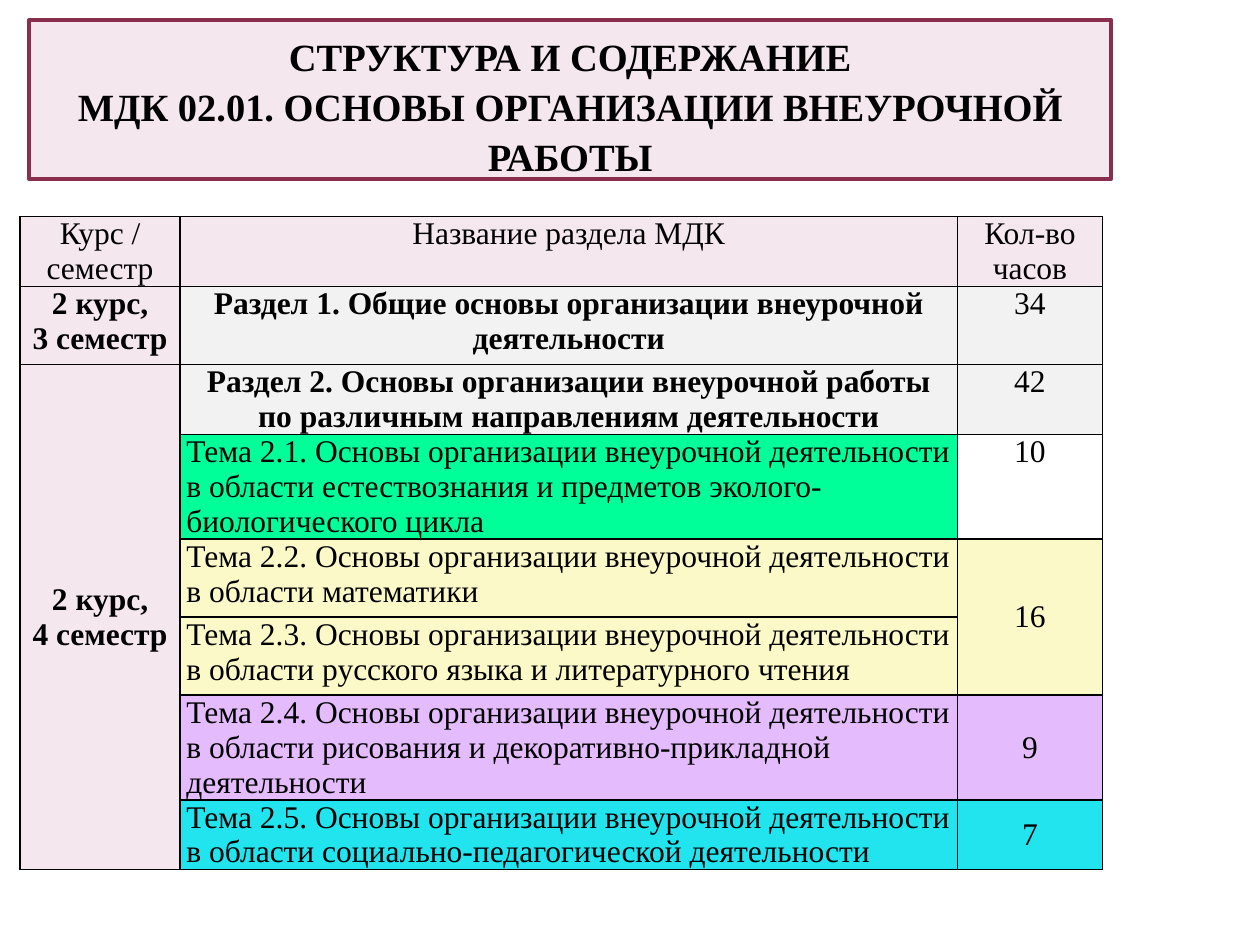
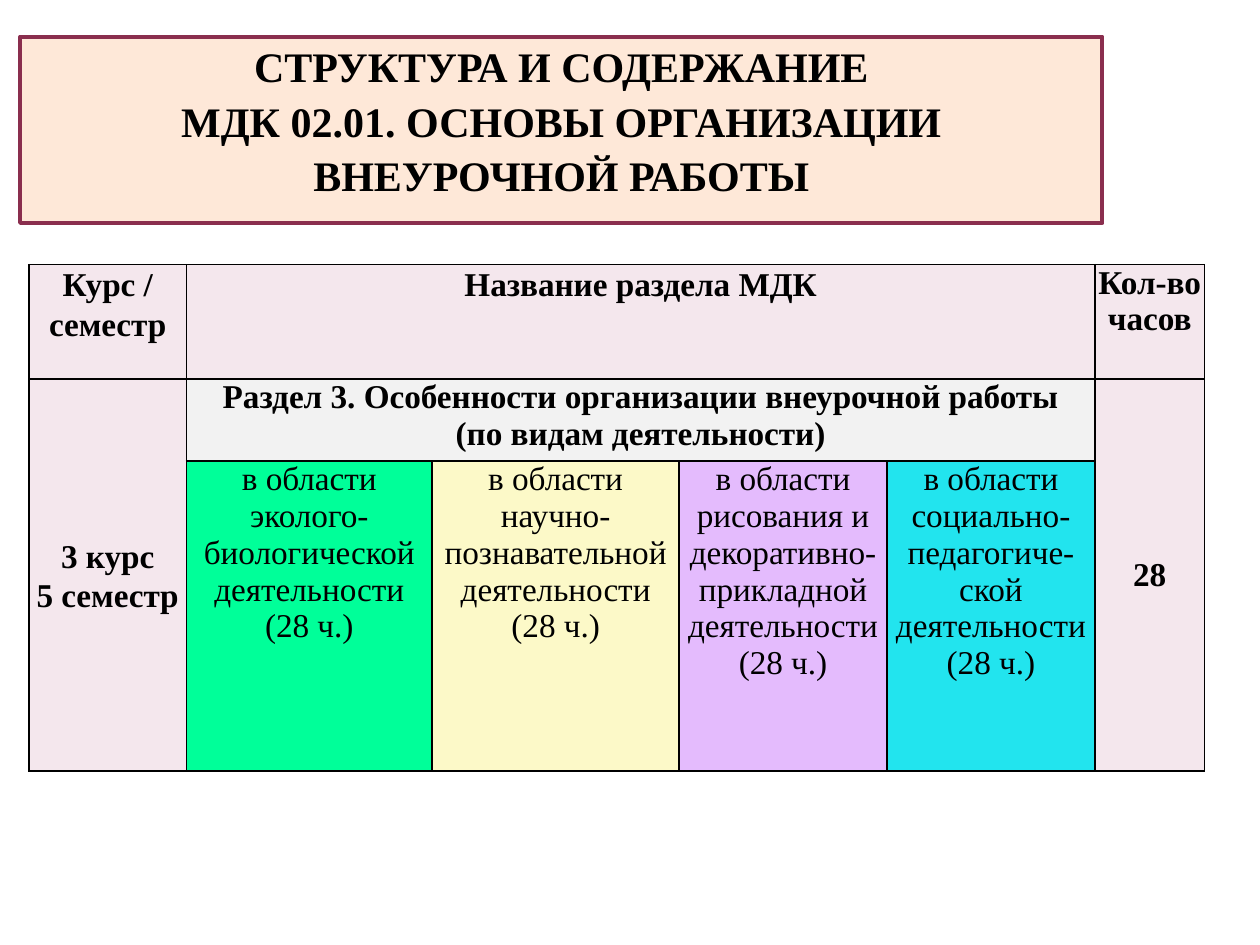
"""Build two slides on the structure and hours of course module МДК 02.01."""
from functools import partial

from lxml.etree import SubElement
from pptx import Presentation
from pptx.dml.color import RGBColor
from pptx.enum.text import MSO_ANCHOR as Anchor, MSO_AUTO_SIZE as AutoSize, PP_ALIGN as Align
from pptx.oxml.ns import qn
from pptx.util import Inches, Pt

FONT = "Times New Roman"
COLORS = {
    "black": "000000",
    "wine": "8A2E4E",
    "rose": "F4E7ED",
    "peach": "FEE8D8",
    "grey": "F2F2F2",
    "white": "FFFFFF",
    "green": "00FF99",
    "cream": "FCF9C8",
    "violet": "E4BBFD",
    "cyan": "22E4EE",
}
TITLE_LINES = "СТРУКТУРА И СОДЕРЖАНИЕ\nМДК 02.01. ОСНОВЫ ОРГАНИЗАЦИИ ВНЕУРОЧНОЙ РАБОТЫ"
TOPIC = "Тема 2.{}. Основы организации внеурочной деятельности в области {}"
TOPICS = [
    ("естествознания и предметов эколого-биологического цикла", "green"),
    ("математики", "cream"),
    ("русского языка и литературного чтения", "cream"),
    ("рисования и декоративно-прикладной деятельности", "violet"),
    ("социально-педагогической деятельности", "cyan"),
]
ACTIVITIES = [
    ("эколого-биологической", "green"),
    ("научно-познавательной", "cream"),
    ("рисования и декоративно-прикладной", "violet"),
    ("социально-педагогиче-ской", "cyan"),
]


def rgb(name):
    return RGBColor.from_string(COLORS[name])


def paint(fill, color):
    fill.solid()
    fill.fore_color.rgb = rgb(color)


def write(frame, text, size=18, bold=False, align=Align.CENTER, spacing=1.0):
    """Write each line of text as a paragraph in the given format."""
    frame.word_wrap = True
    for index, line in enumerate(text.split("\n")):
        para = frame.paragraphs[0] if index == 0 else frame.add_paragraph()
        para.alignment = align
        para.line_spacing = spacing
        span = para.add_run()
        span.text = line
        span.font.name = FONT
        span.font.size = Pt(size)
        span.font.bold = bold
        span.font.color.rgb = rgb("black")


def set_margins(box, side):
    box.margin_left = box.margin_right = Inches(side)
    box.margin_top = box.margin_bottom = 0


def add_title(page, left, top, height, color, size, anchor):
    title = page.shapes.title
    title.left, title.top = Inches(left), Inches(top)
    title.width, title.height = Inches(8.59), Inches(height)
    paint(title.fill, color)
    title.line.color.rgb = rgb("wine")
    title.line.width = Pt(2.25)
    frame = title.text_frame
    frame.auto_size = AutoSize.NONE
    frame.vertical_anchor = anchor
    set_margins(frame, 0.05)
    write(frame, TITLE_LINES, size=size, bold=True, spacing=1.08)


def add_borders(cell):
    properties = cell._tc.get_or_add_tcPr()
    for side in ("a:lnL", "a:lnR", "a:lnT", "a:lnB"):
        line = SubElement(properties, qn(side), w=str(Pt(1)))
        solid = SubElement(line, qn("a:solidFill"))
        SubElement(solid, qn("a:srgbClr"), val=COLORS["black"])


def add_grid(page, left, top, widths, heights):
    """Add a bordered table with the given column widths and row heights."""
    frame = page.shapes.add_table(
        len(heights), len(widths), Inches(left), Inches(top),
        Inches(sum(widths)), Inches(sum(heights)))
    table = frame.table
    table.first_row = table.horz_banding = False
    for column, width in zip(table.columns, widths):
        column.width = Inches(width)
    for row, height in zip(table.rows, heights):
        row.height = Inches(height)
    for cell in table.iter_cells():
        add_borders(cell)
    return table


def fill_cell(table, row, column, text, color, rows=1, columns=1,
              anchor=Anchor.TOP, margin=0.05, **text_format):
    cell = table.cell(row, column)
    if rows * columns > 1:
        cell.merge(table.cell(row + rows - 1, column + columns - 1))
    paint(cell.fill, color)
    cell.vertical_anchor = anchor
    set_margins(cell, margin)
    write(cell.text_frame, text, **text_format)


def add_semesters_slide(deck):
    page = deck.slides.add_slide(deck.slide_layouts[5])
    add_title(page, 0.23, 0.16, 1.26, "rose", 22, Anchor.BOTTOM)
    table = add_grid(page, 0.16, 1.72, [1.27, 6.17, 1.15],
                     [0.55, 0.62, 0.55, 0.83, 0.62, 0.62, 0.83, 0.55])
    put = partial(fill_cell, table)
    for column, heading in enumerate(
            ["Курс / семестр", "Название раздела МДК", "Кол-во часов"]):
        put(0, column, heading, "rose")

    put(1, 0, "2 курс,\n3 семестр", "rose", bold=True)
    put(2, 0, "2 курс,\n4 семестр", "rose", rows=6, anchor=Anchor.MIDDLE, bold=True)
    sections = [
        ("Раздел 1. Общие основы организации внеурочной деятельности", "34"),
        ("Раздел 2. Основы организации внеурочной работы "
         "по различным направлениям деятельности", "42"),
    ]
    for row, (section, hours) in enumerate(sections, 1):
        put(row, 1, section, "grey", bold=True)
        put(row, 2, hours, "grey")

    for number, (area, color) in enumerate(TOPICS, 1):
        put(number + 2, 1, TOPIC.format(number, area), color, align=Align.LEFT)
    put(3, 2, "10", "white")
    put(4, 2, "16", "cream", rows=2, anchor=Anchor.MIDDLE)
    put(6, 2, "9", "violet", anchor=Anchor.MIDDLE)
    put(7, 2, "7", "cyan", anchor=Anchor.MIDDLE)


def add_activities_slide(deck):
    page = deck.slides.add_slide(deck.slide_layouts[5])
    add_title(page, 0.16, 0.29, 1.48, "peach", 24, Anchor.TOP)
    table = add_grid(page, 0.23, 2.1, [1.25, 1.95, 1.96, 1.65, 1.65, 0.87],
                     [0.91, 0.65, 2.46])
    put = partial(fill_cell, table, margin=0.02, size=19)
    put_bold = partial(put, bold=True)
    put_bold(0, 0, "Курс / семестр", "rose", spacing=1.07)
    put_bold(0, 1, "Название раздела МДК", "rose", columns=4, spacing=1.07)
    put_bold(0, 5, "Кол-во часов", "rose")
    put_bold(1, 0, "3 курс\n5 семестр", "rose", rows=2, anchor=Anchor.MIDDLE, spacing=1.07)
    put_bold(1, 1, "Раздел 3. Особенности организации внеурочной работы\n"
             "(по видам деятельности)", "grey", columns=4)
    put_bold(1, 5, "28", "rose", rows=2, anchor=Anchor.MIDDLE)
    for column, (area, color) in enumerate(ACTIVITIES, 1):
        put(2, column, f"в области {area} деятельности\n(28 ч.)", color)


def main():
    deck = Presentation()
    deck.slide_width, deck.slide_height = Inches(10), Inches(7.5)
    add_semesters_slide(deck)
    add_activities_slide(deck)
    deck.save("out.pptx")


if __name__ == "__main__":
    main()
